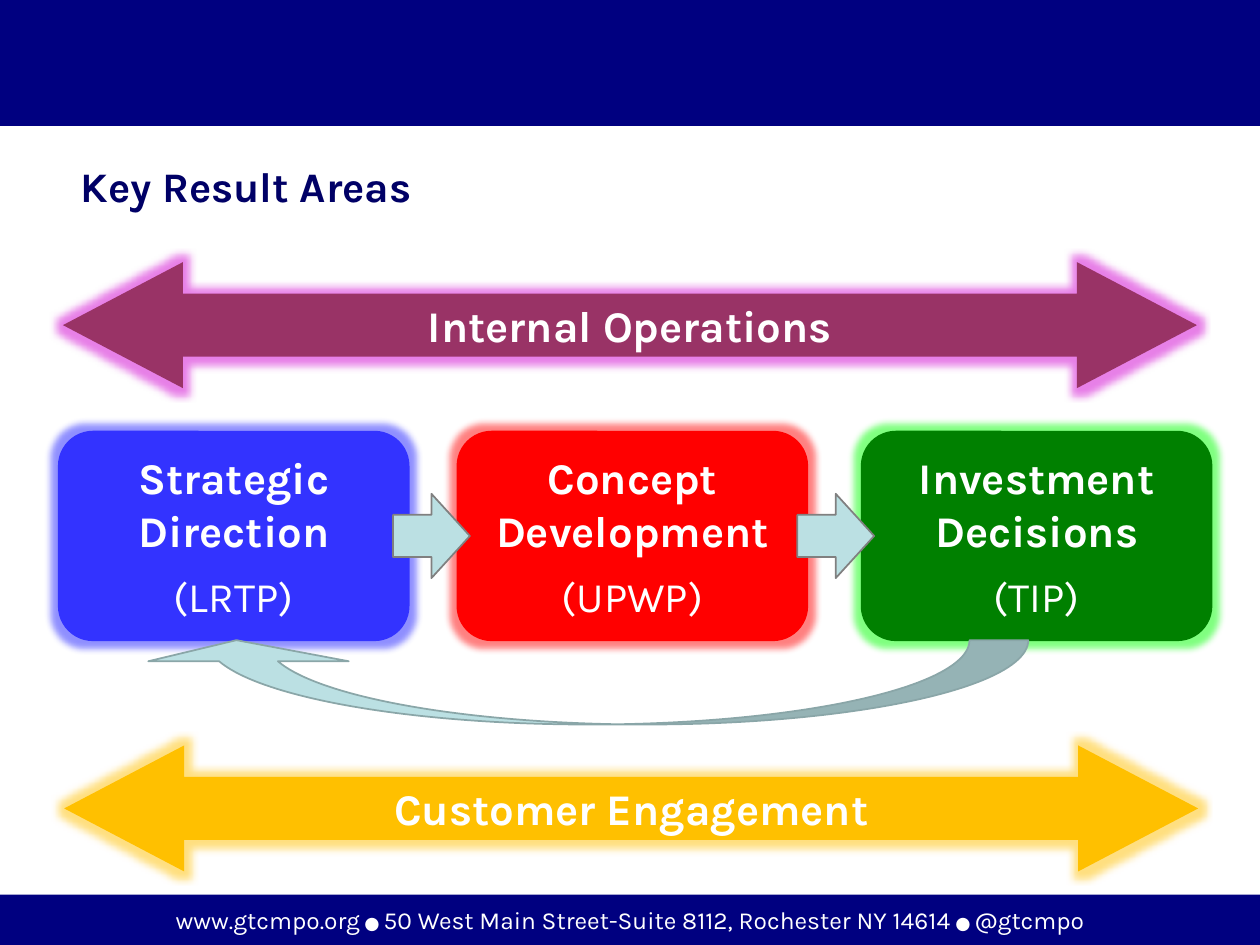
"""Build the Key Result Areas slide."""
from dataclasses import dataclass
from typing import Optional

from lxml import etree
from pptx import Presentation
from pptx import util as u
from pptx.dml.color import RGBColor
from pptx.enum import shapes, text
from pptx.oxml.ns import qn

NAVY = RGBColor(0x00, 0x00, 0x80)
TITLE_NAVY = RGBColor(0x00, 0x00, 0x66)
WHITE = RGBColor(0xFF, 0xFF, 0xFF)
BLUE = RGBColor(0x33, 0x33, 0xFF)
BLUE_GLOW = RGBColor(0x20, 0x20, 0xFF)
RED = RGBColor(0xFF, 0x00, 0x00)
GREEN = RGBColor(0x00, 0x80, 0x00)
GREEN_GLOW = RGBColor(0x00, 0xFF, 0x00)
PLUM = RGBColor(0x99, 0x33, 0x66)
PLUM_GLOW = RGBColor(0xD0, 0x00, 0xD0)
GOLD = RGBColor(0xFF, 0xC0, 0x00)
PALE_TEAL = RGBColor(0xBB, 0xE0, 0xE3)
TEAL_LINE = RGBColor(0x8A, 0xA6, 0xA8)
GRAY = RGBColor(0x80, 0x80, 0x80)

KIND = shapes.MSO_SHAPE
HEADING = {"size": u.Pt(25), "bold": True}
ACRONYM = {"size": u.Pt(24), "bold": False}


@dataclass(frozen=True)
class Box:
    left: float
    top: float
    width: float
    height: float


@dataclass(frozen=True)
class Stage:
    left: float
    name: str
    acronym: str
    fill: RGBColor
    glow: RGBColor


@dataclass(frozen=True)
class Band:
    left: float
    top: float
    name: str
    fill: RGBColor
    glow: RGBColor


STAGES = [
    Stage(33.1, "Strategic\vDirection", "(LRTP)", BLUE, BLUE_GLOW),
    Stage(260.9, "Concept\vDevelopment", "(UPWP)", RED, RED),
    Stage(491.9, "Investment\vDecisions", "(TIP)", GREEN, GREEN_GLOW),
]
BANDS = [
    Band(36, 149.8, "Internal Operations", PLUM, PLUM_GLOW),
    Band(36.7, 426, "Customer Engagement", GOLD, GOLD),
]
FOOTER = [
    ("www.gtcmpo.org", 14),
    (" ● ", 10),
    ("50 West Main Street-Suite 8112, Rochester NY 14614", 14),
    (" ● ", 10),
    ("@gtcmpo", 14),
]


def format_runs(paragraph, color: RGBColor, formats: dict) -> None:
    for run in paragraph.runs:
        run.font.color.rgb = color
        for name, value in {"name": "Karla", **formats}.items():
            setattr(run.font, name, value)


def add_figure(slide, kind, box: Box, fill: RGBColor,
               line: Optional[RGBColor] = None, adjustments: tuple = ()):
    shape = slide.shapes.add_shape(
        kind, u.Pt(box.left), u.Pt(box.top), u.Pt(box.width), u.Pt(box.height))
    shape.shadow.inherit = False
    shape.fill.solid()
    shape.fill.fore_color.rgb = fill
    if line is None:
        shape.line.fill.background()
    else:
        shape.line.color.rgb = line
        shape.line.width = u.Pt(1)
    for index, value in enumerate(adjustments):
        shape.adjustments[index] = value
    return shape


def add_glow(shape, color: RGBColor) -> None:
    effects = shape._element.spPr.find(qn("a:effectLst"))
    glow = etree.SubElement(effects, qn("a:glow"), rad=str(u.Pt(8)))
    tint = etree.SubElement(glow, qn("a:srgbClr"), val=str(color))
    etree.SubElement(tint, qn("a:alpha"), val="50000")


def add_label(paragraph, label: str, formats: dict) -> None:
    paragraph.text = label
    paragraph.alignment = text.PP_ALIGN.CENTER
    format_runs(paragraph, WHITE, formats)


def add_stage(slide, stage: Stage) -> None:
    shape = add_figure(slide, KIND.ROUNDED_RECTANGLE,
                       Box(stage.left, 246.2, 200.9, 120.2), stage.fill)
    add_glow(shape, stage.glow)
    frame = shape.text_frame
    add_label(frame.paragraphs[0], stage.name, HEADING)
    acronym = frame.add_paragraph()
    add_label(acronym, stage.acronym, ACRONYM)
    acronym.space_before = u.Pt(2)
    for paragraph in frame.paragraphs:
        paragraph.space_after = u.Pt(6)


def add_band(slide, band: Band) -> None:
    shape = add_figure(slide, KIND.LEFT_RIGHT_ARROW,
                       Box(band.left, band.top, 648, 72), band.fill,
                       adjustments=(0.5, 0.952))
    add_glow(shape, band.glow)
    add_label(shape.text_frame.paragraphs[0], band.name, HEADING)


def add_title(slide) -> None:
    title = slide.shapes.title
    bounds = {"left": 38.9, "top": 85.7, "width": 648, "height": 408.2}
    for name, value in bounds.items():
        setattr(title, name, u.Pt(value))
    frame = title.text_frame
    frame.text = "Key Result Areas"
    frame.auto_size = text.MSO_AUTO_SIZE.NONE
    frame.vertical_anchor = text.MSO_ANCHOR.TOP
    frame.margin_top = u.Pt(6)
    frame.paragraphs[0].alignment = text.PP_ALIGN.LEFT
    format_runs(frame.paragraphs[0], TITLE_NAVY,
                {"size": u.Pt(24), "bold": True})


def add_footer(slide) -> None:
    shape = add_figure(slide, KIND.RECTANGLE, Box(0, 511.2, 720, 28.8), NAVY)
    shape.text_frame.word_wrap = False
    paragraph = shape.text_frame.paragraphs[0]
    paragraph.alignment = text.PP_ALIGN.CENTER
    for part, size in FOOTER:
        run = paragraph.add_run()
        run.text = part
        run.font.size = u.Pt(size)
    format_runs(paragraph, WHITE, {"bold": False})


def main() -> None:
    presentation = Presentation()
    presentation.slide_width = u.Pt(720)
    presentation.slide_height = u.Pt(540)
    slide = presentation.slides.add_slide(presentation.slide_layouts[5])
    add_title(slide)
    add_figure(slide, KIND.RECTANGLE, Box(0, 0, 720, 72), NAVY)
    add_footer(slide)
    for stage in STAGES:
        add_stage(slide, stage)
    for band in BANDS:
        add_band(slide, band)
    for stage in STAGES[1:]:
        add_figure(slide, KIND.RIGHT_ARROW,
                   Box(stage.left - 36.3, 282.2, 43.9, 48.2), PALE_TEAL, GRAY)
    feedback = add_figure(slide, KIND.CURVED_DOWN_ARROW,
                          Box(77.8, 365.8, 509.8, 48.2), PALE_TEAL, TEAL_LINE,
                          (0.697, 2.378, 0.25))
    feedback.rotation = 180
    presentation.save("out.pptx")


if __name__ == "__main__":
    main()
